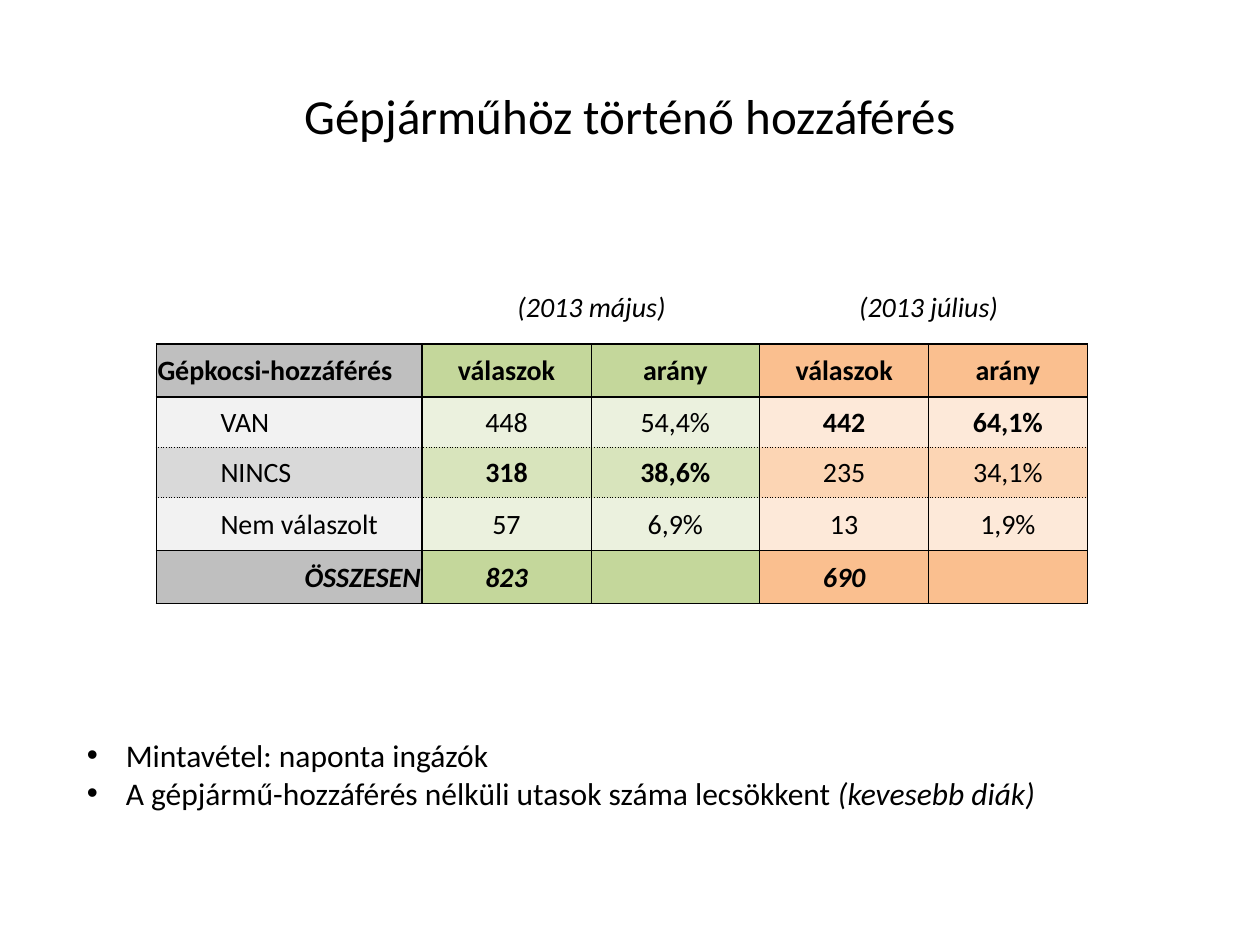
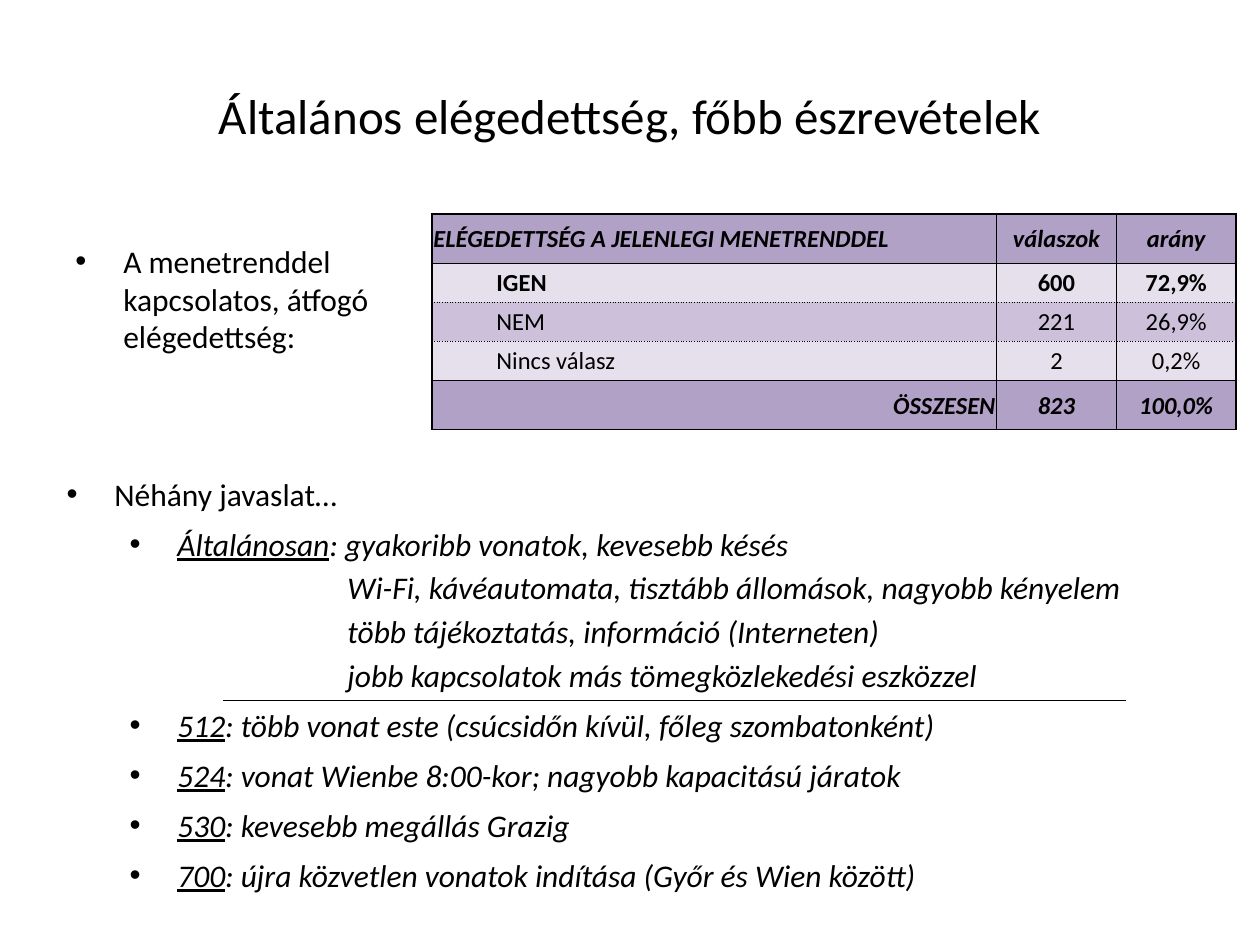
import pptx
import pptx.util
import pptx.dml.color
import pptx.enum.shapes
import pptx.enum.text
import pptx.oxml.ns
from lxml import etree

Inches, Pt = pptx.util.Inches, pptx.util.Pt
ALIGN = pptx.enum.text.PP_ALIGN
ANCHOR = pptx.enum.text.MSO_ANCHOR
FONT, BLACK = "Calibri", "000000"
MINT = ["C4D79B", "EBF1DE", "D8E4BC"]
PEACH = ["FABF8F", "FDE9D9", "FCD5B4"]
GREY = ["BFBFBF", "F2F2F2", "D9D9D9"]
LILAC = ["B2A1C7", "E5E0EC", "CCC0DA"]
SHADES = [0, 1, 2, 1, 0]


def color(code):
    """Turn a hex string into a colour."""
    return pptx.dml.color.RGBColor.from_string(code)


def child(parent, tag, **attrs):
    """Append a drawing element to a parent."""
    return etree.SubElement(parent, pptx.oxml.ns.qn(tag), **attrs)


def write(par, *parts, size=18, align=ALIGN.LEFT, left=0, hang=0,
          before=0, lead=None, bold=False, italic=False):
    """Fill a paragraph with runs; a tuple is a run with underline."""
    props = par._p.get_or_add_pPr()
    props.set("marL", str(Inches(left)))
    props.set("indent", str(-Inches(hang)))
    if hang:
        child(props, "a:buFont", typeface="Arial")
        child(props, "a:buChar", char="•")
    par.alignment = align
    par.space_before = Pt(before)
    if lead:
        par.line_spacing = Pt(lead)
    for part in parts:
        run = par.add_run()
        under = isinstance(part, tuple)
        run.text = part[0] if under else part
        font = run.font
        font.name, font.size = FONT, Pt(size)
        font.bold, font.italic, font.underline = bold, italic, under
        font.color.rgb = color(BLACK)
    return par


def frame(slide, box):
    """Add a wrapping text box and return its text frame."""
    text = slide.shapes.add_textbox(*map(Inches, box)).text_frame
    text.word_wrap = True
    return text


def title(slide, text):
    """Write the slide title."""
    write(frame(slide, (0, 0.63, 10, 1.07)).paragraphs[0], text,
          size=28, align=ALIGN.CENTER)


def border(cell, sides):
    """Draw cell sides given as (tag, width, dash)."""
    props = cell._tc.get_or_add_tcPr()
    for tag, width, dash in sides:
        line = child(props, tag, w=str(Pt(width)))
        child(child(line, "a:solidFill"), "a:srgbClr", val=BLACK)
        child(line, "a:prstDash", val=dash)


def grid(slide, box, rows, cols, highs, tones, edges, size, strong, slant):
    """Draw a survey table with a head row, body rows and a total row."""
    shape = slide.shapes.add_table(len(rows), len(cols), *map(Inches, box))
    table = shape.table
    table.first_row = table.horz_banding = False
    for col, width in zip(table.columns, cols):
        col.width = Inches(width)
    for row, high in zip(table.rows, highs):
        row.height = Inches(high)
    last = len(rows) - 1
    upright = [1 if c in edges else 0.5 for c in range(len(cols) + 1)]
    level = [(0.5, "sysDot") if 1 < r < last else (1, "solid")
             for r in range(last + 2)]
    for r, row in enumerate(rows):
        body = 0 < r < last
        for c, text in enumerate(row):
            cell = table.cell(r, c)
            border(cell, [("a:lnL", upright[c], "solid"),
                          ("a:lnR", upright[c + 1], "solid"),
                          ("a:lnT", *level[r]), ("a:lnB", *level[r + 1])])
            cell.fill.solid()
            cell.fill.fore_color.rgb = color(tones[c][SHADES[r]])
            cell.margin_left = cell.margin_right = Inches(0.01)
            cell.margin_top, cell.margin_bottom = Inches(0.01), 0
            cell.vertical_anchor = ANCHOR.MIDDLE
            align = ALIGN.CENTER
            if c == 0:
                align = ALIGN.RIGHT if r == last else ALIGN.LEFT
            write(cell.text_frame.paragraphs[0], *([text] if text else []),
                  size=size, align=align, left=0.5 if body and c == 0 else 0,
                  bold=not body or (r, c) in strong,
                  italic=r == last or (slant and r == 0))


def access(deck):
    """Build the slide on access to a car."""
    slide = deck.slides.add_slide(deck.slide_layouts[6])
    title(slide, "Gépjárműhöz történő hozzáférés")
    notes = frame(slide, (0.59, 5.79, 9.21, 0.71))
    write(notes.paragraphs[0], "Mintavétel: naponta ingázók",
          left=0.31, hang=0.31)
    par = write(notes.add_paragraph(),
                "A gépjármű-hozzáférés nélküli utasok száma lecsökkent ",
                "(kevesebb diák)", left=0.31, hang=0.31)
    par.runs[-1].font.italic = True
    rows = [
        ["Gépkocsi-hozzáférés", "válaszok", "arány", "válaszok", "arány"],
        ["VAN", "448", "54,4%", "442", "64,1%"],
        ["NINCS", "318", "38,6%", "235", "34,1%"],
        ["Nem válaszolt", "57", "6,9%", "13", "1,9%"],
        ["ÖSSZESEN", "823", "", "690", ""],
    ]
    grid(slide, (1.24, 2.73, 7.38, 2.05), rows,
         cols=[2.11, 1.34, 1.34, 1.34, 1.26],
         highs=[0.42, 0.4, 0.4, 0.42, 0.42],
         tones=[GREY, MINT, MINT, PEACH, PEACH], edges={0, 1, 3, 5}, size=16,
         strong={(1, 3), (1, 4), (2, 1), (2, 2)}, slant=False)
    for left, width, text in [(3.99, 1.41, "(2013 május)"),
                              (6.71, 1.32, "(2013 július)")]:
        label = frame(slide, (left, 2.25, width, 0.37))
        label.word_wrap = False
        write(label.paragraphs[0], text, size=16, align=ALIGN.CENTER,
              italic=True)


def ideas(slide, box):
    """List the suggestions and rule off the general ones."""
    text = frame(slide, box)
    write(text.paragraphs[0], "Néhány javaslat…", left=0.38, hang=0.38,
          lead=25)
    items = [
        ("Általánosan", "gyakoribb vonatok, kevesebb késés",
         ["Wi-Fi, kávéautomata, tisztább állomások, nagyobb kényelem",
          "több tájékoztatás, információ (Interneten)",
          "jobb kapcsolatok más tömegközlekedési eszközzel"]),
        ("512", "több vonat este (csúcsidőn kívül, főleg szombatonként)", []),
        ("524", "vonat Wienbe 8:00-kor; nagyobb kapacitású járatok", []),
        ("530", "kevesebb megállás Grazig", []),
        ("700", "újra közvetlen vonatok indítása (Győr és Wien között)", []),
    ]
    for name, first, more in items:
        write(text.add_paragraph(), (name,), ": " + first, left=0.88,
              hang=0.38, before=3.6, lead=25, italic=True)
        for line in more:
            write(text.add_paragraph(), line, left=2.23, lead=25, italic=True)
    left, top = box[:2]
    rule = slide.shapes.add_connector(
        pptx.enum.shapes.MSO_CONNECTOR.STRAIGHT,
        *map(Inches, (left + 1.34, top + 1.89, left + 8.51, top + 1.89)))
    rule.line.color.rgb = color(BLACK)
    rule.line.width = Pt(0.75)
    child(rule._element.spPr, "a:effectLst")


def content(deck):
    """Build the slide on satisfaction and suggestions."""
    slide = deck.slides.add_slide(deck.slide_layouts[6])
    title(slide, "Általános elégedettség, főbb észrevételek")
    write(frame(slide, (0.5, 1.87, 3.08, 1.17)).paragraphs[0],
          "A menetrenddel kapcsolatos, átfogó elégedettség:",
          left=0.38, hang=0.38)
    rows = [
        ["ELÉGEDETTSÉG A JELENLEGI MENETRENDDEL", "válaszok", "arány"],
        ["IGEN", "600", "72,9%"],
        ["NEM", "221", "26,9%"],
        ["Nincs válasz", "2", "0,2%"],
        ["ÖSSZESEN", "823", "100,0%"],
    ]
    grid(slide, (3.43, 1.7, 6.38, 1.73), rows, cols=[4.48, 0.95, 0.95],
         highs=[0.39, 0.31, 0.31, 0.31, 0.39], tones=[LILAC] * 3,
         edges={0, 3}, size=14, strong={(1, 0), (1, 1), (1, 2)}, slant=True)
    ideas(slide, (0.43, 3.67, 9.07, 3.54))


def main():
    """Build and save the deck."""
    deck = pptx.Presentation()
    deck.slide_width, deck.slide_height = Inches(10), Inches(7.5)
    access(deck)
    content(deck)
    deck.save("out.pptx")


if __name__ == "__main__":
    main()
